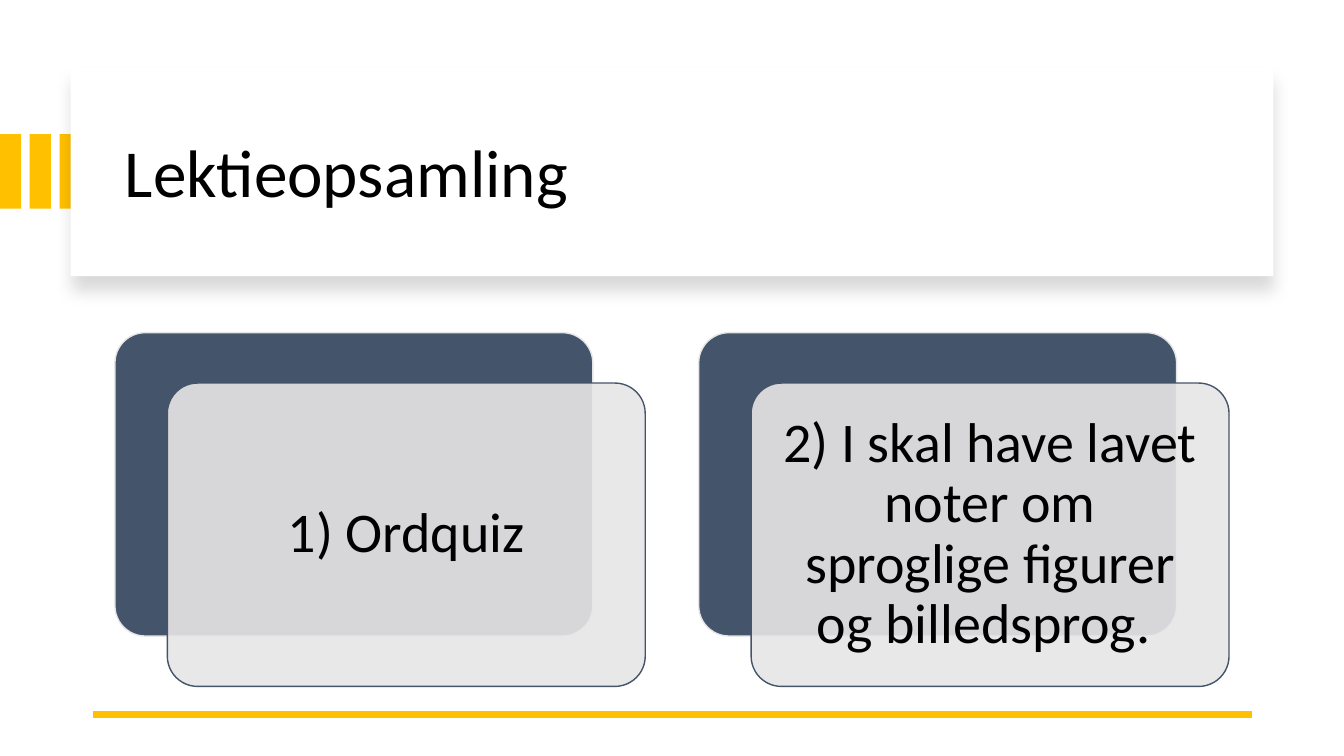
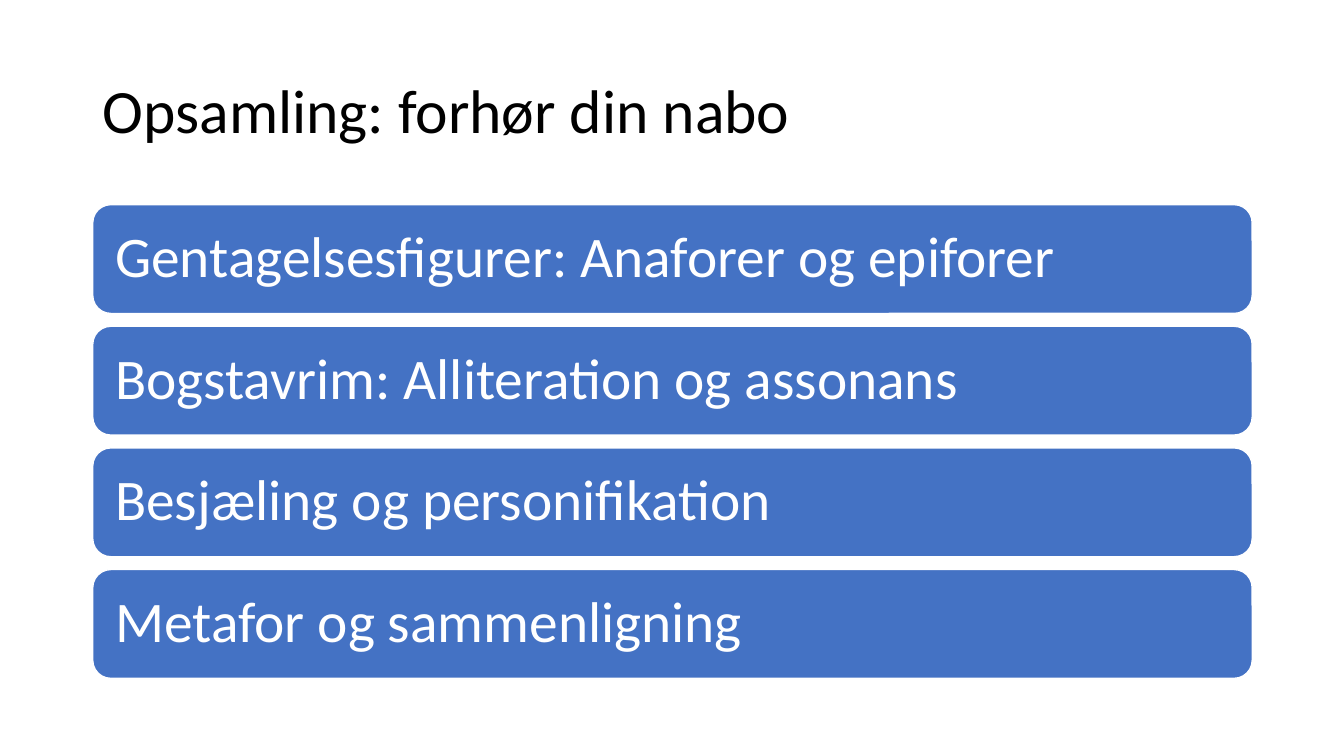
from pptx import Presentation
from pptx.dml.color import RGBColor
from pptx.enum.shapes import MSO_CONNECTOR, MSO_SHAPE
from pptx.enum.text import MSO_ANCHOR, PP_ALIGN
from pptx.oxml import parse_xml
from pptx.oxml.ns import nsdecls, qn
from pptx.util import Inches, Pt
from lxml import etree

WIDTH, HEIGHT = 13.33, 7.5
MARGIN, CONTENT_W = 0.92, 11.5
FONT = "Calibri"
BLACK, WHITE, GOLD = "000000", "FFFFFF", "FFC000"
SLATE, PALE, BLUE = "44546A", "E7E6E6", "4472C4"

HOMEWORK_TITLE = "Lektieopsamling"
HOMEWORK = ["1) Ordquiz",
            "2) I skal have lavet noter om sproglige figurer og billedsprog. "]
REVIEW_TITLE = "Opsamling: forhør din nabo"
REVIEW = ["Gentagelsesfigurer: Anaforer og epiforer",
          "Bogstavrim: Alliteration og assonans",
          "Besjæling og personifikation",
          "Metafor og sammenligning"]


def rgb(color):
    return RGBColor.from_string(color)


def add_box(s, box, fill, line=None, radius=None):
    """Add a rectangle, rounded when a radius share is given."""
    kind = MSO_SHAPE.RECTANGLE if radius is None else MSO_SHAPE.ROUNDED_RECTANGLE
    sp = s.shapes.add_shape(kind, *map(Inches, box))
    sp.shadow.inherit = False
    if radius is not None:
        sp.adjustments[0] = radius
    sp.fill.solid()
    sp.fill.fore_color.rgb = rgb(fill)
    if line:
        sp.line.color.rgb = rgb(line)
        sp.line.width = Pt(1)
    else:
        sp.line.fill.background()
    return sp


def write(sp, text, size, color=BLACK, align=PP_ALIGN.LEFT, inset=None):
    tf = sp.text_frame
    tf.word_wrap = True
    tf.vertical_anchor = MSO_ANCHOR.MIDDLE
    if inset is not None:
        tf.margin_left = tf.margin_right = Inches(inset)
        tf.margin_top = tf.margin_bottom = Inches(inset)
    p = tf.paragraphs[0]
    p.text = text
    p.alignment = align
    p.line_spacing = 0.9
    p.font.name, p.font.size = FONT, Pt(size)
    p.font.color.rgb = rgb(color)


def add_title(s, text, box, size):
    write(s.shapes.add_textbox(*map(Inches, box)), text, size)


def set_alpha(sp, percent):
    color = sp.fill._xPr.find(qn("a:solidFill"))[0]
    etree.SubElement(color, qn("a:alpha")).set("val", str(percent * 1000))


def drop_shadow(sp):
    effects = sp._element.spPr.find(qn("a:effectLst"))
    effects.append(parse_xml(
        f'<a:outerShdw {nsdecls("a")} blurRad="{Pt(11)}" dist="{Pt(10)}" '
        f'dir="5400000" algn="t" rotWithShape="0"><a:srgbClr val="{BLACK}">'
        '<a:alpha val="15000"/></a:srgbClr></a:outerShdw>'))


def add_rule(s, y):
    rule = s.shapes.add_connector(MSO_CONNECTOR.STRAIGHT, Inches(MARGIN + CONTENT_W),
                                  Inches(y), Inches(MARGIN), Inches(y))
    rule.line.color.rgb = rgb(GOLD)
    rule.line.width = Pt(4.5)
    etree.SubElement(rule._element.spPr, qn("a:effectLst"))


def homework_slide(s):
    stripes, last_stripe = 3, 0.59
    for i in range(stripes):
        add_box(s, (i * last_stripe / (stripes - 1), 1.33, 0.21, 0.74), GOLD)
    drop_shadow(add_box(s, (0.7, 0.67, 11.93, 2.07), WHITE))
    add_title(s, HOMEWORK_TITLE, (1.14, 0.89, 11.13, 1.7), 48)
    add_rule(s, 7.09)

    left, top, w, h, pitch = 1.14, 3.3, 4.74, 3.01, 5.79
    shift_x, shift_y = 0.52, 0.5
    for i, text in enumerate(HOMEWORK):
        x = left + i * pitch
        add_box(s, (x, top, w, h), SLATE, PALE, 0.1)
        front = add_box(s, (x + shift_x, top + shift_y, w, h), PALE, SLATE, 0.1)
        set_alpha(front, 90)
        write(front, text, 40, align=PP_ALIGN.CENTER, inset=0.17)


def review_slide(s):
    add_title(s, REVIEW_TITLE, (MARGIN, 0.4, CONTENT_W, 1.45), 44)
    first, last, bar_h = 2.03, 5.65, 1.08
    pitch = (last - first) / (len(REVIEW) - 1)
    for i, text in enumerate(REVIEW):
        bar = add_box(s, (MARGIN, first + i * pitch, CONTENT_W, bar_h),
                      BLUE, WHITE, 1 / 6)
        write(bar, text, 41, WHITE, inset=0.17)


def main():
    prs = Presentation()
    prs.slide_width, prs.slide_height = Inches(WIDTH), Inches(HEIGHT)
    for build in (homework_slide, review_slide):
        build(prs.slides.add_slide(prs.slide_layouts[6]))
    prs.save("out.pptx")


if __name__ == "__main__":
    main()
